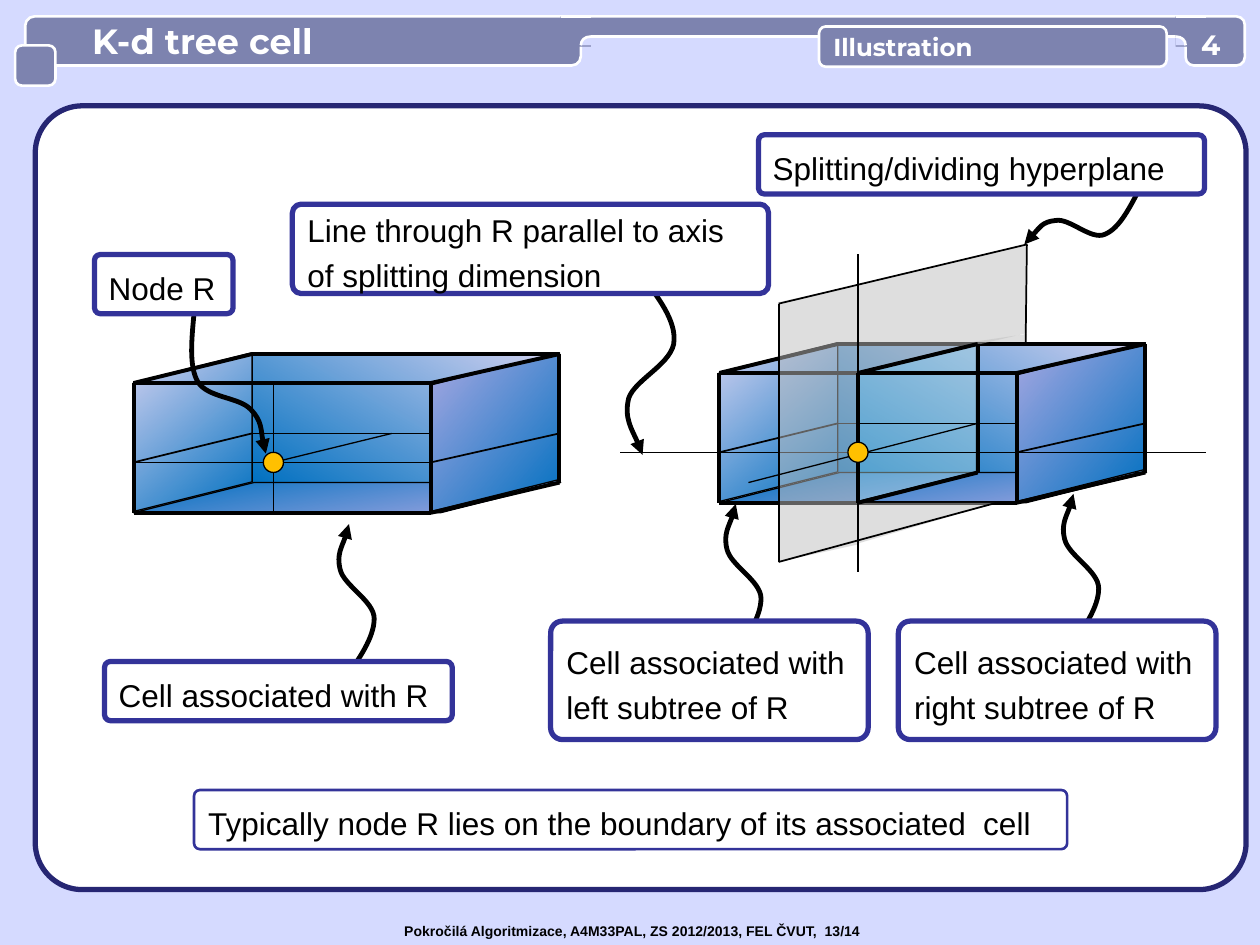
from lxml.etree import SubElement
from pptx import Presentation
from pptx.dml.color import RGBColor
from pptx.enum.shapes import MSO_CONNECTOR as Connector, MSO_SHAPE as Shape
from pptx.enum.text import MSO_ANCHOR as Anchor, PP_ALIGN as Align
from pptx.oxml.ns import qn
from pptx.util import Emu, Inches, Pt

BACKGROUND = RGBColor(0xD5, 0xDA, 0xFF)
WHITE = RGBColor(0xFF, 0xFF, 0xFF)
BLACK = RGBColor(0, 0, 0)
NAVY = RGBColor(0x26, 0x26, 0x73)
INDIGO = RGBColor(0x33, 0x33, 0x99)
SLATE = RGBColor(0x7D, 0x83, 0xAF)
PALE = RGBColor(0xD1, 0xD1, 0xF0)
LILAC = RGBColor(0xA8, 0xA8, 0xE2)
BLUE = RGBColor(0x00, 0x70, 0xC0)
TEAL = RGBColor(0xBB, 0xE0, 0xE3)
GRAY = RGBColor(0xBF, 0xBF, 0xBF)
AMBER = RGBColor(0xFF, 0xC0, 0x00)

COLUMNS, ROWS = 100, 75
HAIR, THIN, RIM, THICK, ARROW, FRAME = 0.75, 1, 1.5, 2.25, 2.75, 3


class Board:
    """Draws on one slide; lengths are columns and rows of its grid."""

    def __init__(self, deck):
        self.slide = deck.slides.add_slide(deck.slide_layouts[6])
        self.shapes = self.slide.shapes
        self.column = deck.slide_width / COLUMNS
        self.row = deck.slide_height / ROWS
        fill = self.slide.background.fill
        fill.solid()
        fill.fore_color.rgb = BACKGROUND

    def spot(self, x, y):
        return Emu(round(x * self.column)), Emu(round(y * self.row))

    def paint(self, shape, fill, line, width, alpha=None):
        """Fill is None, a colour, or (first colour, last colour, clockwise angle)."""
        shape.shadow.inherit = False
        if fill is None:
            shape.fill.background()
        elif isinstance(fill, RGBColor):
            shape.fill.solid()
            shape.fill.fore_color.rgb = fill
            if alpha:
                color = shape.element.spPr.find(".//" + qn("a:srgbClr"))
                SubElement(color, qn("a:alpha"), val=str(alpha * 1000))
        else:
            first, last, angle = fill
            shape.fill.gradient()
            shape.fill.gradient_angle = 360 - angle
            for stop, color in zip(shape.fill.gradient_stops, (first, last)):
                stop.color.rgb = color
        if line is None:
            shape.line.fill.background()
        else:
            shape.line.color.rgb = line
            shape.line.width = Pt(width)

    def block(self, kind, x, y, w, h, fill, line=None, width=HAIR, adj=None, alpha=None):
        shape = self.shapes.add_shape(kind, *self.spot(x, y), *self.spot(w, h))
        if adj is not None:
            shape.adjustments[0] = adj
        self.paint(shape, fill, line, width, alpha)
        return shape

    def upright(self, x, y, w, h, fill, line=None, adj=0.25, alpha=None):
        """A parallelogram with vertical sides, given by the bounds it covers."""
        shape = self.block(Shape.PARALLELOGRAM, x + (w - h) / 2, y + (h - w) / 2,
                           h, w, fill, line, HAIR, adj, alpha)
        shape.rotation = 90
        shape.element.spPr.find(qn("a:xfrm")).set("flipH", "1")

    def line(self, start, end, width=HAIR, color=BLACK):
        line = self.shapes.add_connector(Connector.STRAIGHT, *self.spot(*start), *self.spot(*end))
        line.line.color.rgb = color
        line.line.width = Pt(width)
        SubElement(line.element.spPr, qn("a:effectLst"))

    def outline(self, points, curves=0, fill=None, line=None, width=ARROW, alpha=None, arrow=False):
        """A freeform whose first segments are Bézier curves; filled ones are closed."""
        spots = [self.spot(*point) for point in points]
        builder = self.shapes.build_freeform(*spots[0])
        builder.add_line_segments(spots[1:], close=fill is not None)
        shape = builder.convert_to_shape()
        steps = shape.element.spPr.findall(".//" + qn("a:lnTo"))
        for first in range(0, 3 * curves, 3):
            curve = steps[first]
            curve.tag = qn("a:cubicBezTo")
            for step in steps[first + 1:first + 3]:
                curve.append(step[0])
                step.getparent().remove(step)
        self.paint(shape, fill, line, width, alpha)
        if arrow:
            SubElement(shape.element.spPr.find(qn("a:ln")), qn("a:tailEnd"), type="triangle")

    def arrow(self, points):
        self.outline(points, curves=3, line=BLACK, arrow=True)

    def add_text(self, shape, lines, size, font="Arial", color=BLACK, bold=False,
                 spacing=None, anchor=Anchor.MIDDLE):
        frame = shape.text_frame
        frame.word_wrap = True
        frame.vertical_anchor = anchor
        for index, text in enumerate(lines):
            para = frame.add_paragraph() if index else frame.paragraphs[0]
            para.alignment = Align.LEFT
            if spacing:
                para.line_spacing = spacing
            span = para.add_run()
            span.text = text
            span.font.size, span.font.name, span.font.bold = Pt(size), font, bold
            span.font.color.rgb = color
        return frame

    def label(self, x, y, w, h, *lines, width=FRAME):
        box = self.block(Shape.ROUNDED_RECTANGLE, x, y, w, h, WHITE, INDIGO, width, 0.1)
        self.add_text(box, lines, 18, spacing=1.2)

    def tab(self, x, y, w, h, adj=0.17):
        return self.block(Shape.ROUNDED_RECTANGLE, x, y, w, h, SLATE, WHITE, RIM, adj)

    def heading(self, shape, text, size):
        return self.add_text(shape, [text], size, "Montserrat", WHITE, True)

    def joint(self, x, bend, side):
        """Covers the seam between two tabs; bend is the column of its rounded corner."""
        self.block(Shape.RECTANGLE, x, 1.3, 2.4, 2.4, SLATE)
        self.line((x, 1.3), (x + 2.4, 1.3), RIM, WHITE)
        arc = [(bend + 0.8 * side, 2.9), (bend + 0.3 * side, 2.9), (bend, 3.2), (bend, 3.6)]
        self.outline(arc + [(bend + 0.8 * side, 3.6)], 1, BACKGROUND)
        self.outline(arc, 1, line=WHITE, width=RIM)

    def cell(self, x, y, divided=False):
        """A box whose front top left corner is at x, y."""
        def at(dx, dy):
            return x + dx, y + dy
        # Faces
        self.block(Shape.RECTANGLE, *at(9.4, -2.3), 24.4, 10.2, (PALE, BLUE, 120), BLACK)
        self.block(Shape.PARALLELOGRAM, *at(0, 7.9), 33.9, 2.4, (LILAC, BLUE, 260), BLACK, adj=3.98)
        self.upright(*at(0, -2.4), 9.4, 12.6, (PALE, BLUE, 220), BLACK)
        if divided:
            self.upright(*at(11, -2.4), 9.4, 12.6, TEAL, BLACK, alpha=43)
        self.upright(*at(23.6, -2.4), 10.2, 12.6, (LILAC, BLUE, 230), BLACK)
        # Outer edges, then the middle lines round the sides
        front, back = [(0, 0), (23.6, 0)], [(9.4, -2.3), (33.8, -2.3)]
        low = [(0, 10.3), (23.6, 10.3), (33.8, 7.9)]
        edges = [front, back, low[:2], low[1:], (front[0], back[0]), (front[1], back[1]),
                 (front[0], low[0]), (front[1], low[1]), (back[1], low[2])]
        for start, end in edges:
            self.line(at(*start), at(*end), THICK)
        for start, end, width in [((0, 6.3), (9.4, 4), THIN), ((23.6, 6.3), (33.8, 4), THIN),
                                  ((9.4, 4), (21.3, 4), HAIR), ((20.5, 4), (23.6, 4), HAIR)]:
            self.line(at(*start), at(*end), width)

    def node(self, x, y):
        self.block(Shape.OVAL, x - 0.8, y - 0.8, 1.6, 1.6, AMBER, BLACK)


def main():
    deck = Presentation()
    deck.slide_width, deck.slide_height = Inches(10), Inches(7.5)
    board = Board(deck)
    board.block(Shape.ROUNDED_RECTANGLE, 2.8, 8.4, 96.1, 62.2, WHITE, NAVY, FRAME, 0.06)

    # Arrows from the cell labels, all of one shape
    bends = [(0, 0), (1.2, -1.7), (2.4, -3.4), (2.4, -4.9), (2.4, -6.3),
             (0, -7.5), (-0.3, -8.8), (-0.6, -10), (0.3, -11.6), (0.4, -12.4)]
    for x, y in [(84.8, 51.6), (58, 52.4), (27.3, 54)]:
        board.arrow([(x + dx, y + dy) for dx, dy in bends])
    board.arrow([(90.6, 14.7), (89.7, 16.4), (88.9, 18.1), (87.7, 18.6), (86.6, 19.1),
                 (84.9, 17.3), (83.8, 17.5), (82.7, 17.6), (81.8, 18.9), (81.3, 19.4)])

    # Divided cell with its splitting hyperplane
    board.outline([(81.5, 26.5), (81.4, 27.3), (76.8, 27.2)], fill=GRAY, alpha=50)
    board.cell(57.1, 29.6, divided=True)
    board.line((95.7, 35.9), (68.1, 35.9))
    board.line((67.3, 35.9), (49.2, 35.9))
    board.upright(61.8, 22.6, 6.3, 22, GRAY, adj=0.22, alpha=50)
    board.upright(68.1, 19.4, 13.4, 10.2, GRAY, adj=0.31, alpha=50)
    board.outline([(68.1, 39.9), (68.2, 43.1), (79.1, 39.9)], fill=GRAY, alpha=50)
    rim = [(79.1, 39.9), (61.8, 44.6), (61.8, 24.1), (81.5, 19.4), (81.4, 27.3)]
    for start, end in zip(rim, rim[1:]):
        board.line(start, end, THIN)
    cut = [(68.1, 39.9), (68.1, 29.6), (77.6, 27.3), (77.6, 37.5)]
    for start, end in zip(cut, cut[1:] + cut[:1]):
        board.line(start, end, THICK)
    board.line((68.1, 20.2), (68.1, 45.4), THIN)
    board.line((77.6, 33.6), (59.4, 38.3))
    board.node(68.1, 35.9)

    # Whole cell with lines through its node
    board.cell(10.6, 30.4)
    board.line((31.1, 34.4), (21.7, 36.7))
    board.line((21.7, 30.4), (21.7, 40.6), THIN)
    board.line((34.3, 36.7), (21.7, 36.7))
    board.line((20.9, 36.7), (10.6, 36.7))
    board.node(21.7, 36.7)

    # Arrows to the node and the axis line, then the labels
    board.arrow([(15.4, 24.9), (15.2, 27), (15, 29.1), (15.7, 30.3), (16.5, 31.6),
                 (19, 31.5), (19.9, 32.5), (20.8, 33.4), (20.8, 35.2), (21.1, 36)])
    board.arrow([(50.2, 21), (51.9, 23.1), (53.6, 25.2), (53.5, 27), (53.5, 28.8),
                 (50.4, 30.1), (49.9, 31.6), (49.5, 33.2), (50.7, 35.1), (51, 36.1)])
    board.label(60.2, 10.7, 35.4, 4.7, "Splitting/dividing hyperplane")
    board.label(7.5, 20.2, 11, 4.7, "Node R")
    board.label(23.2, 16.2, 37.8, 7.1, "Line through R parallel to axis", "of splitting dimension")
    board.label(8.3, 52.5, 27.6, 4.7, "Cell associated with R")
    for x, side in [(43.7, "left"), (71.3, "right")]:
        board.label(x, 49.3, 25.2, 9.4, "Cell associated with", f"{side} subtree of R")
    board.label(15.4, 62.7, 69.3, 4.7,
                "Typically node R lies on the boundary of its associated  cell", width=RIM)

    # Header
    title = board.heading(board.tab(2, 1.3, 44.1, 3.9, 0.19), "K-d tree cell", 20)
    title.margin_left = Inches(0.51)
    board.tab(46.1, 1.3, 48.8, 1.6, 0.5)
    board.joint(44.5, 46.1, 1)
    board.tab(1.2, 3.6, 3.2, 3.2)
    board.tab(94.1, 1.3, 4.7, 3.9)
    board.joint(93.3, 94.1, -1)
    board.heading(board.tab(65, 2.1, 27.6, 3.2), "Illustration", 14)
    number = board.shapes.add_textbox(*board.spot(94.1, 2.2), *board.spot(4, 2.7))
    frame = board.heading(number, "4", 16)
    frame.margin_left = frame.margin_right = frame.margin_top = frame.margin_bottom = 0
    frame.paragraphs[0].alignment = Align.CENTER

    # Footer
    footer = board.shapes.add_textbox(*board.spot(31.1, 72.7), *board.spot(39, 2.4))
    board.add_text(footer, ["Pokročilá Algoritmizace, A4M33PAL, ZS 2012/2013, FEL ČVUT,  13/14"],
                   8, bold=True, anchor=Anchor.TOP)
    deck.save("out.pptx")


if __name__ == "__main__":
    main()
